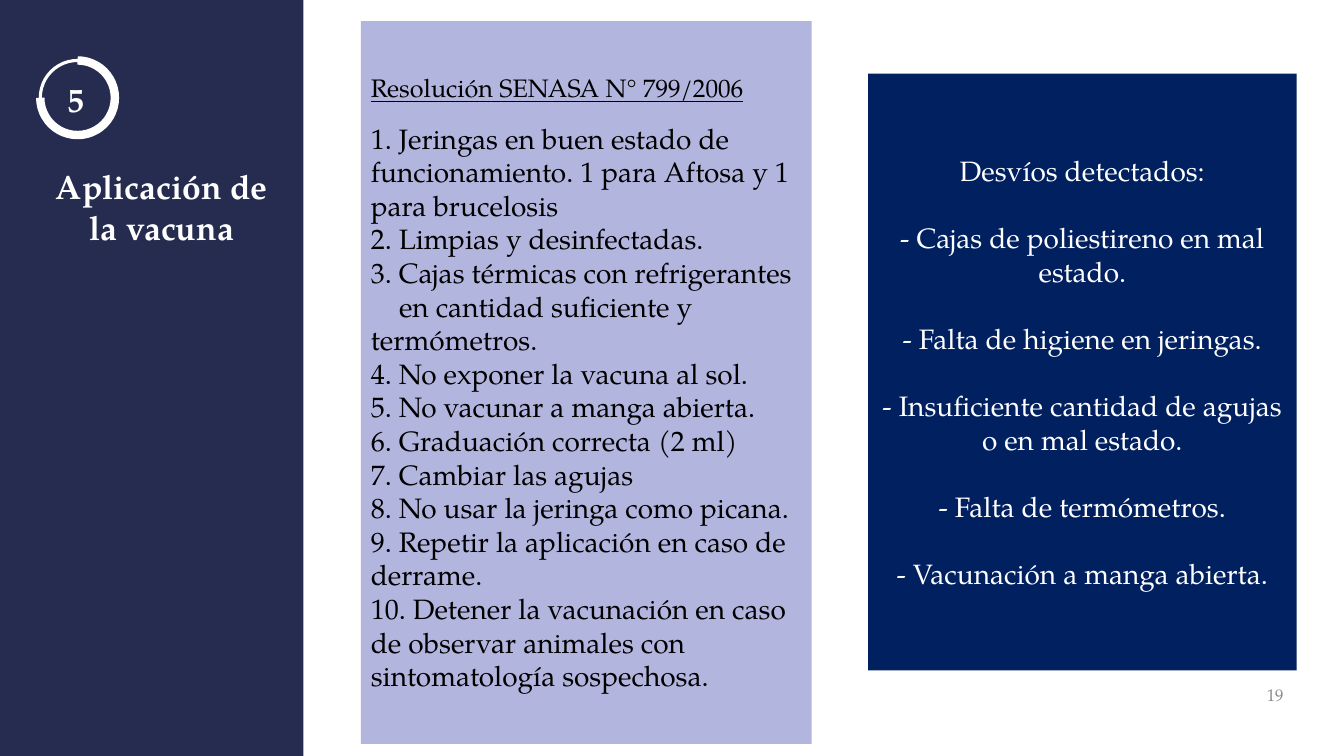
"""Builds the slide on vaccine application: rules and detected deviations."""
from pptx import Presentation
from pptx import util as u
from pptx.dml.color import RGBColor
from pptx.enum import shapes, text

STEP = "5"
TITLE = "Aplicación de la vacuna"
PAGE = "19"
RESOLUTION = "Resolución SENASA N° 799/2006"
COOLER_DETAIL = "en cantidad suficiente y termómetros."
RULES = [
    "1. Jeringas en buen estado de funcionamiento. 1 para Aftosa y 1 para brucelosis",
    "2. Limpias y desinfectadas.",
    "3. Cajas térmicas con refrigerantes",
    COOLER_DETAIL,
    "4. No exponer la vacuna al sol.",
    "5. No vacunar a manga abierta.",
    "6. Graduación correcta (2 ml)",
    "7. Cambiar las agujas",
    "8. No usar la jeringa como picana.",
    "9. Repetir la aplicación en caso de derrame.",
    "10. Detener la vacunación en caso de observar animales con sintomatología sospechosa.",
]
DEVIATIONS = [
    "Desvíos detectados:",
    "- Cajas de poliestireno en mal estado.",
    "- Falta de higiene en jeringas.",
    "- Insuficiente cantidad de agujas o en mal estado.",
    "- Falta de termómetros.",
    "- Vacunación a manga abierta.",
]
PLACES = {
    "sidebar": (-0.15, -0.08, 3.16, 7.73),
    "page": (9.83, 6.69, 3, 0.4),
    "rules": (3.58, 0.21, 4.47, 7.17),
    "deviations": (8.61, 0.73, 4.25, 5.92),
    "title": (0.35, 1.55, 2.51, 1.05),
    "step": (0.57, 0.73, 0.74, 0.52),
    "ring": (0.4, 0.6, 0.74, 0.74),
}
THEME = {
    "font": "TeX Gyre Pagella",
    "sidebar": "252C4F", "lilac": "B2B5DE", "navy": "002060",
    "white": "FFFFFF", "black": "000000", "grey": "888888",
    "heading": 24, "body": 20, "subhead": 18, "small": 12,
}
LEFT, CENTER, RIGHT = text.PP_ALIGN.LEFT, text.PP_ALIGN.CENTER, text.PP_ALIGN.RIGHT
TOP, MIDDLE = text.MSO_ANCHOR.TOP, text.MSO_ANCHOR.MIDDLE


def rgb(color):
    return RGBColor.from_string(THEME[color])


def place(part):
    return [u.Inches(length) for length in PLACES[part]]


def add_outline(slide, part, preset, fill=None, line_width=None):
    outline = slide.shapes.add_shape(preset, *place(part))
    outline.shadow.inherit = False
    if fill:
        outline.fill.solid()
        outline.fill.fore_color.rgb = rgb(fill)
    else:
        outline.fill.background()
    if line_width:
        outline.line.color.rgb = rgb("white")
        outline.line.width = u.Pt(line_width)
    else:
        outline.line.fill.background()
    return outline


def write(holder, lines, size, color, align=LEFT, anchor=TOP, bold=False, gap=0, inset=0.1):
    frame = holder.text_frame
    frame.word_wrap = True
    frame.vertical_anchor = anchor
    frame.margin_left = frame.margin_right = u.Inches(0.1)
    frame.margin_top = frame.margin_bottom = u.Inches(inset)
    frame.text = "\n".join(lines)
    for index, paragraph in enumerate(frame.paragraphs):
        paragraph.alignment = align
        paragraph.space_before = u.Pt(gap if index else 0)
        paragraph.font.name = THEME["font"]
        paragraph.font.size = u.Pt(THEME[size])
        paragraph.font.bold = bold
        paragraph.font.color.rgb = rgb(color)
    return frame.paragraphs


def main():
    deck = Presentation()
    deck.slide_width, deck.slide_height = u.Inches(13.33), u.Inches(7.5)
    slide = deck.slides.add_slide(deck.slide_layouts[6])
    preset = shapes.MSO_SHAPE

    add_outline(slide, "sidebar", preset.RECTANGLE, "sidebar")
    page = slide.shapes.add_textbox(*place("page"))
    write(page, [PAGE], "small", "grey", RIGHT, MIDDLE, inset=0.05)

    rules = add_outline(slide, "rules", preset.RECTANGLE, "lilac")
    resolution, *items = write(rules, [RESOLUTION, *RULES], "body", "black", anchor=MIDDLE)
    resolution.font.size = u.Pt(THEME["subhead"])
    resolution.font.underline = True
    items[0].space_before = u.Pt(13)
    cooler_detail = items[RULES.index(COOLER_DETAIL)]
    cooler_detail._p.get_or_add_pPr().set("indent", str(u.Inches(0.28)))

    deviations = add_outline(slide, "deviations", preset.RECTANGLE, "navy")
    write(deviations, DEVIATIONS, "body", "white", CENTER, MIDDLE, gap=24)

    title = slide.shapes.add_textbox(*place("title"))
    write(title, [TITLE], "heading", "white", CENTER, bold=True)
    step = slide.shapes.add_textbox(*place("step"))
    write(step, [STEP], "heading", "white", bold=True, inset=0.05)

    add_outline(slide, "ring", preset.OVAL, line_width=2.25)
    progress = add_outline(slide, "ring", preset.ARC, line_width=6)
    progress.adjustments[0] = 162
    progress.adjustments[1] = 108

    deck.save("out.pptx")


if __name__ == "__main__":
    main()
